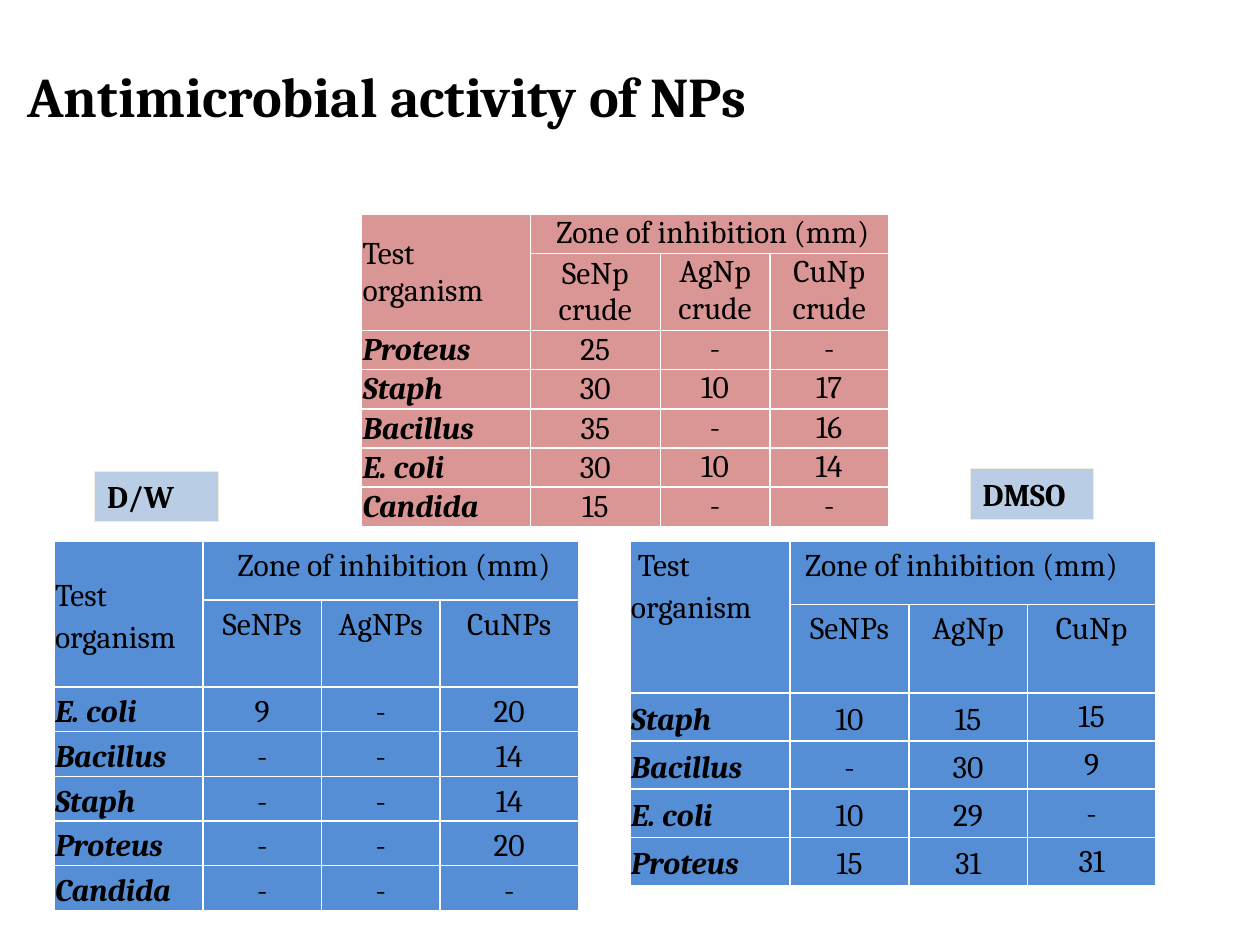
from lxml.etree import SubElement
from pptx import Presentation
from pptx.dml.color import RGBColor
from pptx.enum.shapes import MSO_SHAPE
from pptx.enum.text import MSO_ANCHOR as ANCHOR, MSO_AUTO_SIZE, PP_ALIGN as ALIGN
from pptx.oxml.ns import qn
from pptx.util import Cm, Pt

BLACK = RGBColor(0x00, 0x00, 0x00)
WHITE = RGBColor(0xFF, 0xFF, 0xFF)
ROSE = RGBColor(0xD9, 0x96, 0x94)
BLUE = RGBColor(0x55, 0x8E, 0xD5)
PALE_BLUE = RGBColor(0xB9, 0xCD, 0xE5)
CREAM = RGBColor(0xEE, 0xEC, 0xE1)
FONT = "Cambria"


def write_text(tf, text, size=18, bold=False, italic=False, align=ALIGN.LEFT, spacing=None):
    """Fill a text frame with one formatted paragraph per line."""
    for i, line in enumerate(text.split("\n")):
        p = tf.paragraphs[0] if i == 0 else tf.add_paragraph()
        p.alignment = align
        if spacing:
            p.line_spacing = spacing
        r = p.add_run()
        r.text = line
        r.font.name, r.font.size = FONT, Pt(size)
        r.font.bold, r.font.italic = bold, italic
        r.font.color.rgb = BLACK


def add_title(s, text):
    """Place and format the slide title."""
    sp = s.shapes.title
    sp.left, sp.top, sp.width, sp.height = Cm(0.3), Cm(1.12), Cm(17.65), Cm(1.62)
    tf = sp.text_frame
    tf.auto_size = MSO_AUTO_SIZE.NONE
    tf.vertical_anchor = ANCHOR.TOP
    write_text(tf, text, size=32, bold=True)


def add_label(s, text, left, top):
    """Add a pale box naming the solvent of the table below it."""
    sp = s.shapes.add_shape(MSO_SHAPE.RECTANGLE, Cm(left), Cm(top), Cm(2.49), Cm(1.02))
    sp.shadow.inherit = False
    sp.fill.solid()
    sp.fill.fore_color.rgb = PALE_BLUE
    sp.line.color.rgb = CREAM
    sp.line.width = Pt(0.75)
    sp.text_frame.vertical_anchor = ANCHOR.TOP
    write_text(sp.text_frame, text, bold=True)


def style_cell(cell, color):
    """Give a cell white borders, a fill and narrow margins."""
    tc_pr = cell._tc.get_or_add_tcPr()
    for side in ("a:lnL", "a:lnR", "a:lnT", "a:lnB"):
        ln = SubElement(tc_pr, qn(side), w=str(Pt(1)))
        SubElement(SubElement(ln, qn("a:solidFill")), qn("a:srgbClr"), val=str(WHITE))
    cell.fill.solid()
    cell.fill.fore_color.rgb = color
    cell.margin_left = cell.margin_right = cell.margin_top = Cm(0.02)
    cell.margin_bottom = 0


def add_zone_table(s, left, top, widths, heights, rows, color, middle_head, middle_body,
                   zone_align=ALIGN.CENTER, spacing=None):
    """Add an inhibition table; the first middle_* columns are centred vertically."""
    gf = s.shapes.add_table(len(rows), len(widths), Cm(left), Cm(top),
                            Cm(sum(widths)), Cm(sum(heights)))
    table = gf.table
    table.first_row = table.horz_banding = False
    for col, width in zip(table.columns, widths):
        col.width = Cm(width)
    for row, height in zip(table.rows, heights):
        row.height = Cm(height)
    for i, row in enumerate(rows):
        for j, text in enumerate(row):
            cell = table.cell(i, j)
            style_cell(cell, color)
            middle = j < (middle_head if i < 2 else middle_body) and (i, j) != (0, 1)
            cell.vertical_anchor = ANCHOR.MIDDLE if middle else ANCHOR.TOP
            if text:
                organism = i > 1 and j == 0
                align = ALIGN.LEFT if j == 0 else zone_align if i == 0 else ALIGN.CENTER
                write_text(cell.text_frame, text, bold=organism, italic=organism,
                           align=align, spacing=spacing)
    table.cell(0, 0).merge(table.cell(1, 0))
    table.cell(0, 1).merge(table.cell(0, len(widths) - 1))


def main():
    """Build the slide and save it."""
    prs = Presentation()
    prs.slide_width, prs.slide_height = Cm(25.4), Cm(19.05)
    s = prs.slides.add_slide(prs.slide_layouts[5])
    add_title(s, "Antimicrobial activity of NPs")

    crude = [
        ("Test organism", " Zone of inhibition (mm)", "", ""),
        ("", "SeNp crude", "AgNp crude", "CuNp\ncrude"),
        ("Proteus", "25", "-", "-"),
        ("Staph", "30", "10", "17"),
        ("Bacillus", "35", "-", "16"),
        ("E. coli", "30", "10", "14"),
        ("Candida", "15", "-", "-"),
    ]
    water = [
        ("Test organism", " Zone of inhibition (mm)", "", ""),
        ("", "SeNPs", "AgNPs", "CuNPs"),
        ("E. coli", "9", "-", "20"),
        ("Bacillus", "-", "-", "14"),
        ("Staph", "-", "-", "14"),
        ("Proteus", "-", "-", "20"),
        ("Candida", "-", "-", "-"),
    ]
    dmso = [
        (" Test organism", "  Zone of inhibition (mm)", "", ""),
        ("", "SeNPs", "AgNp", "CuNp"),
        ("Staph", "10", "15", "15"),
        ("Bacillus", "-", "30", "9"),
        ("E. coli", "10", "29", "-"),
        ("Proteus", "15", "31", "31"),
    ]
    add_zone_table(s, 7.29, 4.32, [3.4, 2.62, 2.21, 2.39], [0.79, 1.55] + [0.79] * 5,
                   crude, ROSE, middle_head=2, middle_body=2)
    add_zone_table(s, 1.09, 10.92, [3, 2.39, 2.39, 2.79], [1.18, 1.75] + [0.9] * 5,
                   water, BLUE, middle_head=1, middle_body=4, spacing=1.15)
    add_zone_table(s, 12.7, 10.92, [3.23, 2.39, 2.39, 2.59], [1.27, 1.78] + [0.97] * 4,
                   dmso, BLUE, middle_head=0, middle_body=3,
                   zone_align=ALIGN.LEFT, spacing=1.15)
    add_label(s, "DMSO", 19.56, 9.45)
    add_label(s, "D/W", 1.91, 9.5)
    prs.save("out.pptx")


if __name__ == "__main__":
    main()
